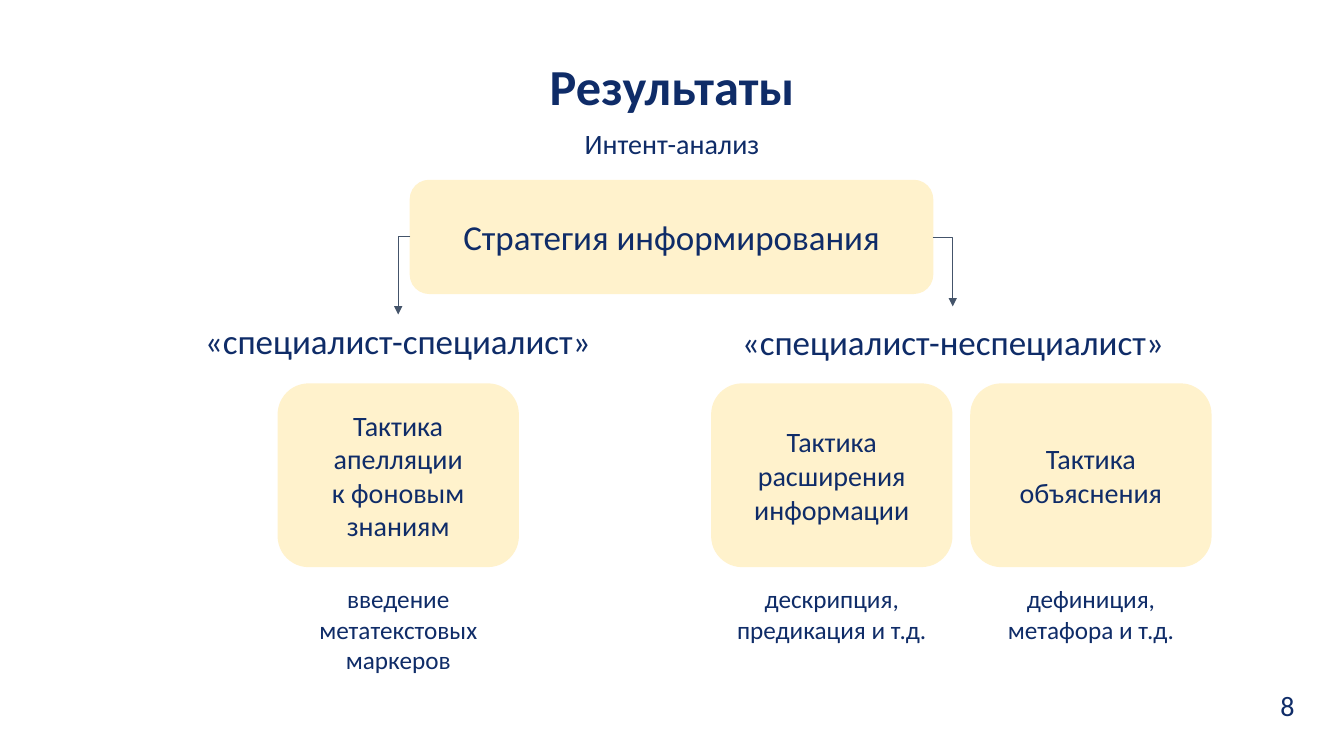
from dataclasses import dataclass

import pptx
import pptx.dml.color
import pptx.enum.shapes
import pptx.enum.text
import pptx.oxml.ns
import pptx.oxml.xmlchemy
import pptx.util
from pptx.util import Inches

ALIGN = pptx.enum.text.PP_ALIGN
ANCHOR = pptx.enum.text.MSO_ANCHOR
SHAPE = pptx.enum.shapes.MSO_SHAPE


@dataclass(frozen=True)
class Theme:
    font: str = "Calibri"
    ink: str = "0F2C68"
    card: str = "FFF2CC"
    arrow: str = "44546A"
    title: int = 36
    heading: int = 25
    body: int = 20
    note: int = 18


THEME = Theme()


def rgb(value):
    return pptx.dml.color.RGBColor.from_string(value)


def apply(target, values):
    for name, value in values.items():
        setattr(target, name, value)


def write(sp, text, size, bold=False, align=ALIGN.CENTER, **frame):
    """Fill a shape with one paragraph; a newline is a line break."""
    tf = sp.text_frame
    apply(tf, {"word_wrap": True, **frame})
    p = tf.paragraphs[0]
    p.text = text
    p.alignment = align
    for r in p.runs:
        apply(r.font, {"name": THEME.font, "size": pptx.util.Pt(size), "bold": bold})
        r.font.color.rgb = rgb(THEME.ink)


def add_title(s, text, x, y, w, h):
    sp = s.shapes.title
    apply(sp, {"left": Inches(x), "top": Inches(y), "width": Inches(w), "height": Inches(h)})
    write(sp, text, THEME.title, bold=True, vertical_anchor=ANCHOR.TOP,
          auto_size=pptx.enum.text.MSO_AUTO_SIZE.NONE)


def add_label(s, text, x, y, w, h, size, align=ALIGN.CENTER):
    sp = s.shapes.add_textbox(Inches(x), Inches(y), Inches(w), Inches(h))
    write(sp, text, size, align=align)


def add_card(s, text, x, y, w, h, size):
    sp = s.shapes.add_shape(SHAPE.ROUNDED_RECTANGLE, Inches(x), Inches(y), Inches(w), Inches(h))
    sp.shadow.inherit = False
    sp.fill.solid()
    sp.fill.fore_color.rgb = rgb(THEME.card)
    sp.line.color.rgb = rgb(THEME.card)
    sp.line.width = pptx.util.Pt(1)
    write(sp, text, size, vertical_anchor=ANCHOR.MIDDLE,
          margin_left=Inches(0.19), margin_right=Inches(0.19))


def add_bent_arrow(s, x1, y1, x2, y2):
    """Draw an arrow that runs sideways, then down."""
    cxn = s.shapes.add_connector(pptx.enum.shapes.MSO_CONNECTOR.ELBOW,
                                 Inches(x1), Inches(y1), Inches(x2), Inches(y2))
    cxn.line.color.rgb = rgb(THEME.arrow)
    cxn.line.width = pptx.util.Pt(0.5)
    qn = pptx.oxml.ns.qn
    sp_pr = cxn._element.spPr
    sp_pr.find(qn("a:prstGeom")).set("prst", "bentConnector2")
    ln = sp_pr.find(qn("a:ln"))
    ln.append(pptx.oxml.xmlchemy.OxmlElement("a:tailEnd"))
    ln[-1].set("type", "triangle")
    sp_pr.append(pptx.oxml.xmlchemy.OxmlElement("a:effectLst"))


def main():
    prs = pptx.Presentation()
    apply(prs, {"slide_width": Inches(13.33), "slide_height": Inches(7.5)})
    s = prs.slides.add_slide(prs.slide_layouts[5])

    add_title(s, "Результаты", 5.35, 0.5, 2.63, 0.71)
    add_label(s, "Интент-анализ", 5.61, 1.21, 2.11, 0.44, THEME.body)
    add_card(s, "Стратегия информирования", 4.07, 1.79, 5.18, 1.12, THEME.heading)

    audiences = [
        ("«специалист-специалист»", 1.89, 3.12, 4.11),
        ("«специалист-неспециалист»", 7.24, 3.13, 4.42),
    ]
    for text, x, y, w in audiences:
        add_label(s, text, x, y, w, 0.52, THEME.heading)

    add_bent_arrow(s, 4.07, 2.35, 3.95, 3.12)
    add_bent_arrow(s, 9.25, 2.35, 9.45, 3.04)

    card_w = 2.38
    tactics = [
        (2.76, "Тактика апелляции\nк фоновым знаниям",
         "введение метатекстовых маркеров", 2.16, 1.01),
        (7.06, "Тактика расширения информации",
         "дескрипция, предикация и т.д.", 2.16, 0.71),
        (9.63, "Тактика объяснения",
         "дефиниция, метафора и т.д.", 1.91, 0.71),
    ]
    for x, tactic, means, w, h in tactics:
        add_card(s, tactic, x, 3.81, card_w, 1.81, THEME.body)
        add_label(s, means, x + (card_w - w) / 2, 5.74, w, h, THEME.note)

    add_label(s, "8", 12.6, 6.78, 0.44, 0.44, THEME.body, ALIGN.LEFT)
    prs.save("out.pptx")


if __name__ == "__main__":
    main()
